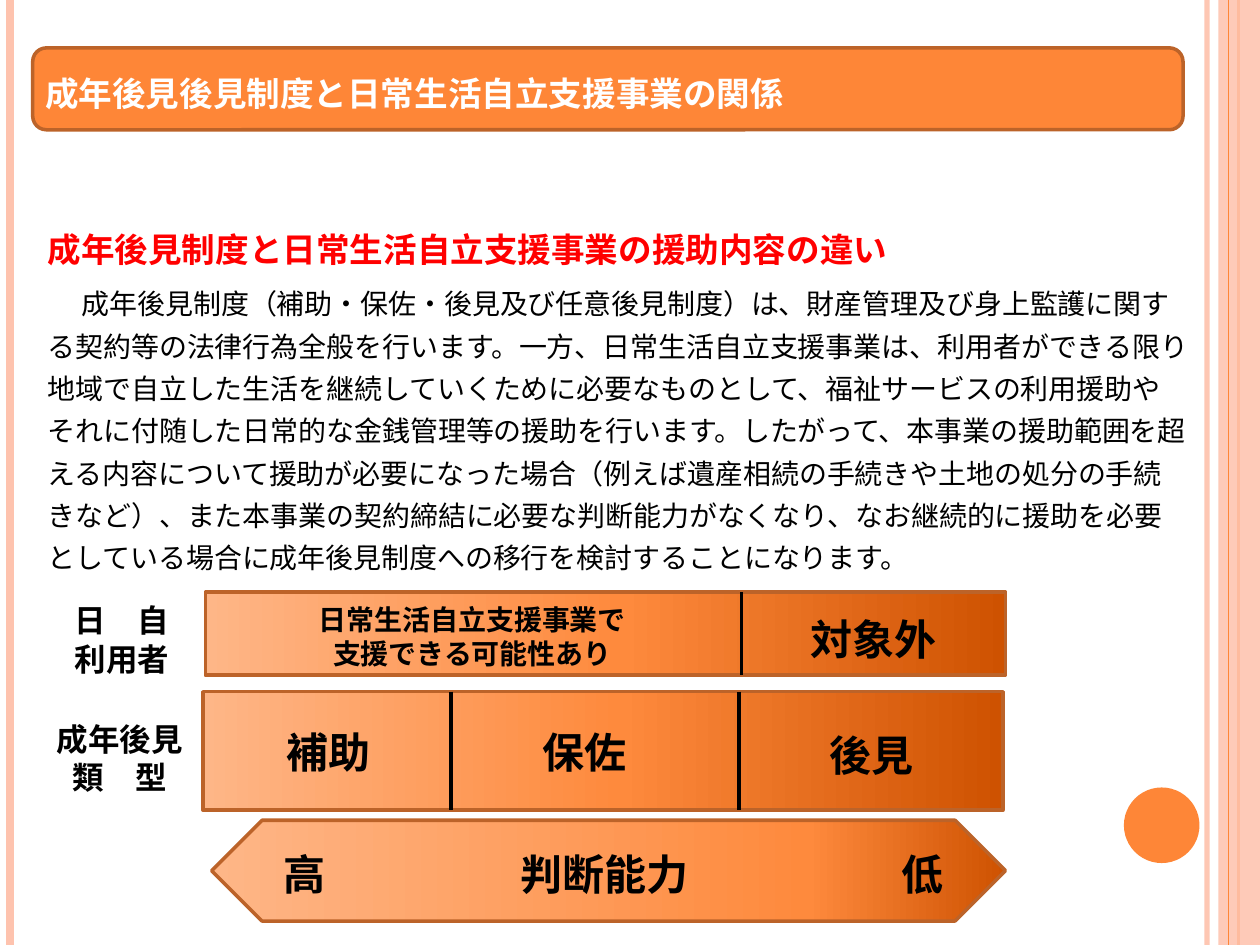
from lxml import etree
from pptx import Presentation
from pptx import util as u
from pptx.dml.color import RGBColor
from pptx.enum import shapes, text
from pptx.oxml.ns import qn

FONT = "Noto Sans CJK JP"
WIDTH, HEIGHT = 10, 7.5
LEADING = 1.21

ORANGE = RGBColor(0xFE, 0x86, 0x37)
PEACH = RGBColor(0xFE, 0xC3, 0xAE)
BROWN = RGBColor(0xBC, 0x63, 0x29)
DARK = RGBColor(0xCE, 0x52, 0x01)
MIDDLE = RGBColor(0xFE, 0x8A, 0x3D)
LIGHT = RGBColor(0xFE, 0xB6, 0x87)
BLACK = RGBColor(0, 0, 0)
WHITE = RGBColor(0xFF, 0xFF, 0xFF)
RED = RGBColor(0xFF, 0, 0)

HEADING = "成年後見制度と日常生活自立支援事業の援助内容の違い"
BODY = (
    "成年後見制度（補助・保佐・後見及び任意後見制度）は、財産管理及び身上監護に関する契約等の"
    "法律行為全般を行います。一方、日常生活自立支援事業は、利用者ができる限り地域で自立した生活を"
    "継続していくために必要なものとして、福祉サービスの利用援助やそれに付随した日常的な金銭管理等の"
    "援助を行います。したがって、本事業の援助範囲を超える内容について援助が必要になった場合"
    "（例えば遺産相続の手続きや土地の処分の手続きなど）、また本事業の契約締結に必要な判断能力が"
    "なくなり、なお継続的に援助を必要としている場合に成年後見制度への移行を検討することになります。"
)


def inches(*lengths):
    return [u.Inches(length) for length in lengths]


def set_alpha(color_format, percent):
    color = color_format._xFill.find(qn("a:srgbClr"))
    etree.SubElement(color, qn("a:alpha")).set("val", str(percent * 1000))


def add_line(page, start, end, color, width, alpha=100):
    line = page.shapes.add_connector(
        shapes.MSO_CONNECTOR.STRAIGHT, *inches(*start, *end))
    line.line.color.rgb = color
    line.line.width = u.Pt(width)
    properties = line._element.spPr
    if alpha < 100:
        color_node = next(properties.iter(qn("a:srgbClr")))
        etree.SubElement(color_node, qn("a:alpha")).set("val", str(alpha * 1000))
    etree.SubElement(properties, qn("a:effectLst"))


def add_shape(page, kind, box, fill=None, outline=None):
    shape = page.shapes.add_shape(kind, *inches(*box))
    shape.shadow.inherit = False
    if fill is not None:
        shape.fill.solid()
        shape.fill.fore_color.rgb = fill
    if outline is None:
        shape.line.fill.background()
    else:
        shape.line.color.rgb = outline
        shape.line.width = u.Pt(2)
    return shape


def shade(shape, middle, angle):
    """Fill with a dark-to-light gradient; middle is a percentage."""
    shape.fill.gradient()
    gradient = shape._element.spPr.find(qn("a:gradFill"))
    stops = gradient.find(qn("a:gsLst"))
    for stop in list(stops):
        stops.remove(stop)
    for place, color in ((0, DARK), (middle, MIDDLE), (100, LIGHT)):
        stop = etree.SubElement(stops, qn("a:gs"), pos=str(place * 1000))
        etree.SubElement(stop, qn("a:srgbClr"), val=str(color))
    gradient.find(qn("a:lin")).set("ang", str(angle * 60000))


def style(para, size, color, bold=True, small_caps=False):
    font = para.font
    font.size, font.bold, font.name = u.Pt(size), bold, FONT
    font.color.rgb = color
    properties = para._p.pPr.find(qn("a:defRPr"))
    etree.SubElement(properties, qn("a:ea"), typeface=FONT)
    if small_caps:
        properties.set("cap", "small")
    para.line_spacing = u.Pt(round(size * LEADING, 1))


def add_frame(page, box, anchor, top=0.05, bottom=0.05):
    frame = page.shapes.add_textbox(*inches(*box)).text_frame
    frame.word_wrap = True
    frame.vertical_anchor = anchor
    frame.margin_top, frame.margin_bottom = inches(top, bottom)
    return frame


def add_label(page, box, lines, size=24):
    frame = add_frame(page, box, text.MSO_ANCHOR.TOP, top=0.08)
    for index, line in enumerate(lines):
        para = frame.add_paragraph() if index else frame.paragraphs[0]
        para.text = line
        para.alignment = text.PP_ALIGN.CENTER
        style(para, size, BLACK)


def draw_margins(page):
    def rule(x, color, width, alpha=100):
        add_line(page, (x, 0), (x, HEIGHT), color, width, alpha)

    rule(9.58, PEACH, 3, 93)
    rule(0.08, PEACH, 4.5)
    rule(9.83, ORANGE, 1.5)
    strip = add_shape(page, shapes.MSO_SHAPE.RECTANGLE, (9.67, 0, 0.33, HEIGHT), PEACH)
    color = next(strip._element.spPr.iter(qn("a:srgbClr")))
    etree.SubElement(color, qn("a:alpha")).set("val", "87000")
    rule(9.75, ORANGE, 0.75)
    add_shape(page, shapes.MSO_SHAPE.OVAL, (8.92, 6.25, 0.6, 0.6), ORANGE)


def draw_title(page, box):
    left, top, width, height = box
    add_shape(page, shapes.MSO_SHAPE.ROUNDED_RECTANGLE, box, ORANGE, BROWN)
    frame = add_frame(page, (left, top, width + 0.15, height - 0.1),
                      text.MSO_ANCHOR.BOTTOM, bottom=0.02)
    para = frame.paragraphs[0]
    para.text = "成年後見後見制度と日常生活自立支援事業の関係"
    style(para, 24, WHITE, small_caps=True)


def draw_explanation(page, box):
    frame = add_frame(page, box, text.MSO_ANCHOR.BOTTOM, bottom=0.02)
    heading, body = frame.paragraphs[0], frame.add_paragraph()
    heading.text, body.text = HEADING, BODY
    style(heading, 24, RED, small_caps=True)
    style(body, 20, BLACK, bold=False, small_caps=True)
    body.space_before = u.Pt(5)
    body._p.pPr.set("indent", str(u.Inches(0.27)))


def draw_band(page, box, dividers):
    """Shaded bar, cut at the given shares of its width."""
    left, top, width, height = box
    shade(add_shape(page, shapes.MSO_SHAPE.RECTANGLE, box, outline=BROWN), 48, 180)
    for share in dividers:
        x = left + width * share
        add_line(page, (x, top), (x, top + height), BLACK, 2)


def draw_ability_arrow(page, box):
    left, top, width, height = box
    upright = (left + (width - height) / 2, top + (height - width) / 2, height, width)
    arrow = add_shape(page, shapes.MSO_SHAPE.UP_DOWN_ARROW, upright, outline=BROWN)
    arrow.rotation = 270
    arrow.adjustments[0], arrow.adjustments[1] = 0.5, 1.1
    shade(arrow, 25, 270)
    for word, x, label_width in (("高", 0.31, 0.85), ("低", 5.22, 0.85),
                                 ("判断能力", 1.4, 3.44)):
        add_label(page, (left + x, top + 0.14, label_width, 0.5), [word])


def draw_guardianship_row(page, box):
    left, top, width, height = box
    draw_band(page, box, (0.31, 0.67))
    for word, x, y in (("補助", 0.42, 0.19), ("保佐", 2.45, 0.19), ("後見", 4.73, 0.22)):
        add_label(page, (left + x, top + y, 1.16, 0.5), [word])
    add_label(page, (0.28, top + 0.14, 1.34, 0.71), ["成年後見類　型"], 18)


def draw_support_row(page, box):
    left, top, width, height = box
    draw_band(page, box, (0.67,))
    add_label(page, (left + 4.25, top + 0.09, 2.1, 0.5), ["対象外"])
    add_label(page, (left + 0.05, top, 4.14, 0.64),
              ["日常生活自立支援事業で", "支援できる可能性あり"], 16)
    add_label(page, (0.28, top - 0.01, 1.38, 0.71), ["日　自", "利用者"], 18)


def main():
    deck = Presentation()
    deck.slide_width, deck.slide_height = inches(WIDTH, HEIGHT)
    page = deck.slides.add_slide(deck.slide_layouts[6])
    draw_margins(page)
    draw_title(page, (0.26, 0.38, 9.13, 0.65))
    draw_explanation(page, (0.28, -2.46, 9.26, 7.05))
    draw_ability_arrow(page, (1.68, 6.51, 6.3, 0.8))
    draw_guardianship_row(page, (1.61, 5.49, 6.35, 0.94))
    draw_support_row(page, (1.63, 4.7, 6.35, 0.66))
    deck.save("out.pptx")


if __name__ == "__main__":
    main()
